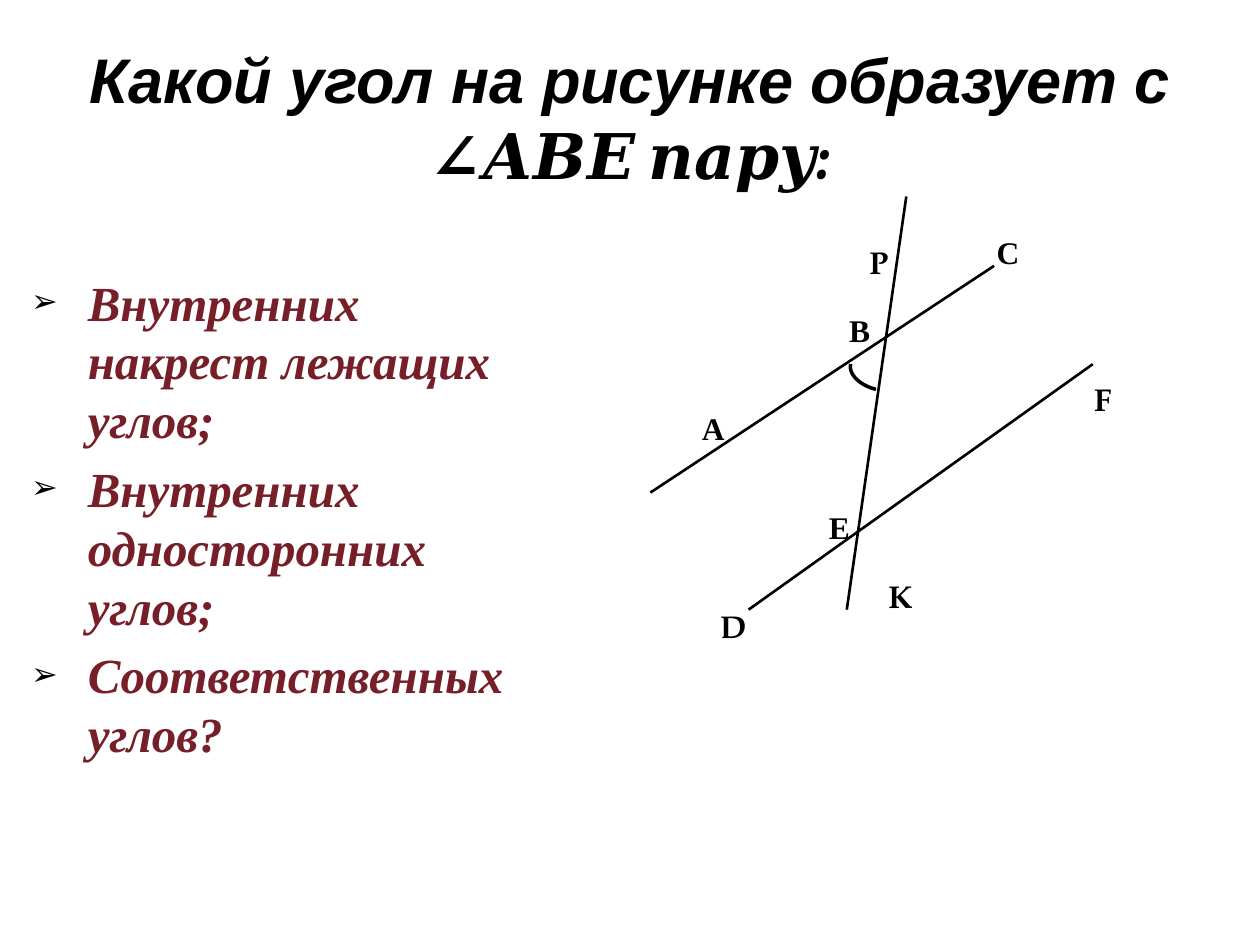
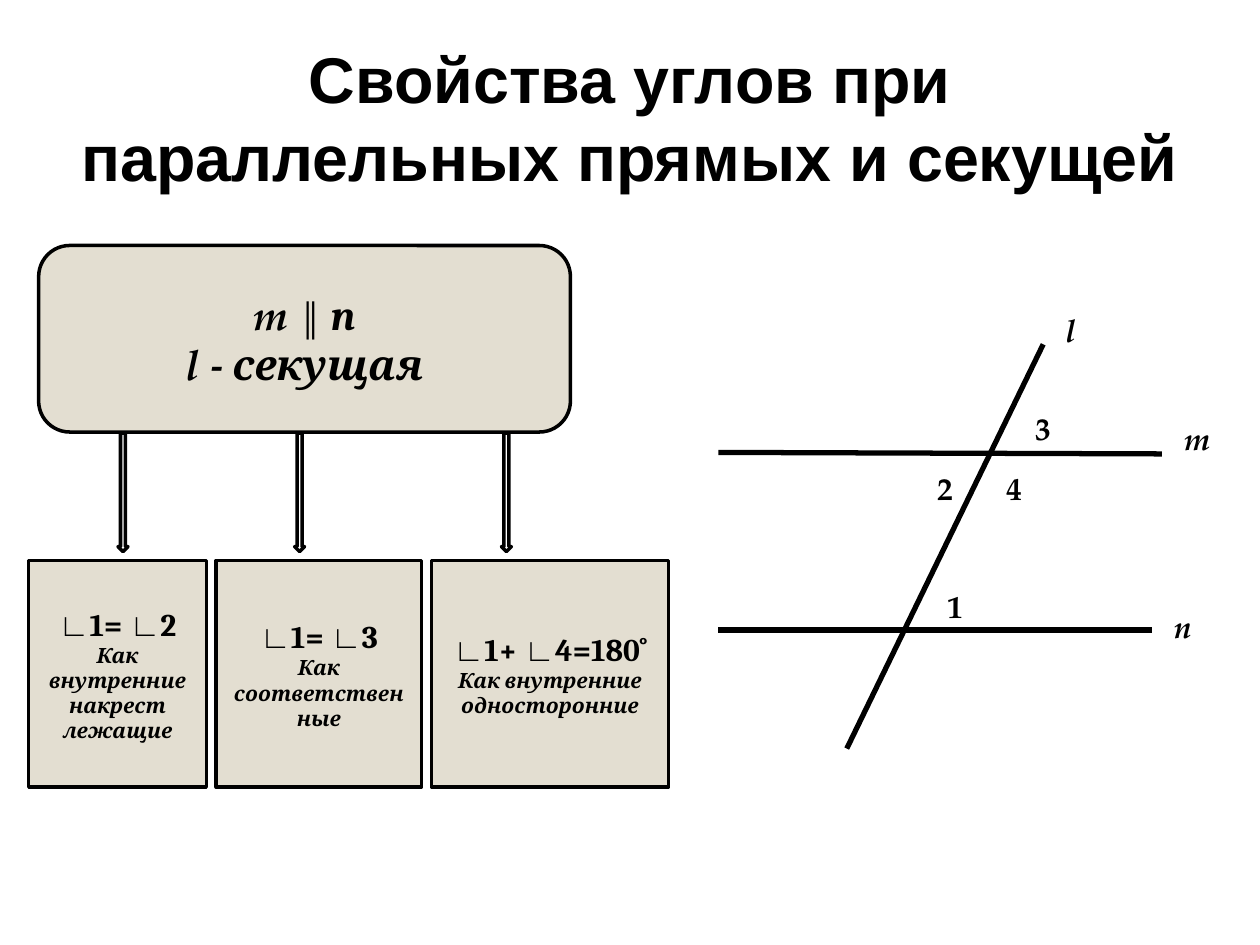
import pptx
import pptx.dml.color
import pptx.enum.shapes
import pptx.enum.text
import pptx.oxml
import pptx.oxml.ns
import pptx.util

Cm = pptx.util.Cm
Pt = pptx.util.Pt
Shape = pptx.enum.shapes.MSO_SHAPE
Anchor = pptx.enum.text.MSO_ANCHOR
Align = pptx.enum.text.PP_ALIGN

INK, SAND, WINE, WHITE = "000000", "E3DED1", "771F28", "FFFFFF"
SANS, SERIF, MATH, LETTERS = "Arial", "Times New Roman", "Cambria", "TeX Gyre Pagella"
TITLE_BOX = (1.27, 0.76, 22.86, 3.18)
LABEL_WIDTH, LABEL_HEIGHT = 1.1, 1.02


def color(value):
    """Turn a hex string into a colour."""
    return pptx.dml.color.RGBColor.from_string(value)


def add_run(paragraph, text, font, size, ink=INK, bold=True, italic=False):
    """Append one formatted run to a paragraph."""
    run = paragraph.add_run()
    run.text = text
    run.font.name = font
    run.font.size = Pt(size)
    run.font.bold = bold
    run.font.italic = italic
    run.font.color.rgb = color(ink)
    properties = run._r.get_or_add_rPr()
    for tag in ("a:ea", "a:cs"):
        element = pptx.oxml.parse_xml(f"<{tag} {pptx.oxml.ns.nsdecls('a')} typeface='{font}'/>")
        properties.append(element)


def add_title(slide, runs, size, italic=False):
    """Place and fill the title from (text, font) pairs."""
    title = slide.shapes.title
    title.left, title.top, title.width, title.height = map(Cm, TITLE_BOX)
    frame = title.text_frame
    frame.word_wrap = True
    frame.auto_size = pptx.enum.text.MSO_AUTO_SIZE.NONE
    frame.vertical_anchor = Anchor.MIDDLE
    paragraph = frame.paragraphs[0]
    paragraph.alignment = Align.CENTER
    for text, font in runs:
        add_run(paragraph, text, font, size, italic=italic)


def add_bullet(paragraph):
    """Give a paragraph a hanging arrow bullet."""
    properties = paragraph._p.get_or_add_pPr()
    properties.set("marL", str(Cm(1.52)))
    properties.set("indent", str(Cm(-1.14)))
    for xml in (
        f"<a:buClr {{}}><a:srgbClr val='{INK}'/></a:buClr>",
        "<a:buSzPct {} val='65000'/>",
        f"<a:buFont {{}} typeface='{SANS}'/>",
        "<a:buChar {} char='➢'/>",
    ):
        properties.append(pptx.oxml.parse_xml(xml.format(pptx.oxml.ns.nsdecls("a"))))


def add_questions(slide, box, questions):
    """Write the bulleted list of angle pairs."""
    frame = slide.shapes.add_textbox(*map(Cm, box)).text_frame
    frame.word_wrap = True
    for index, question in enumerate(questions):
        paragraph = frame.paragraphs[0] if index == 0 else frame.add_paragraph()
        paragraph.space_before = Pt(5.6)
        add_bullet(paragraph)
        add_run(paragraph, question, SERIF, 28, WINE, italic=True)


def add_lines(slide, origin, lines, weight):
    """Draw straight lines given by end points relative to the origin."""
    left, top = origin
    for x1, y1, x2, y2 in lines:
        ends = map(Cm, (left + x1, top + y1, left + x2, top + y2))
        line = slide.shapes.add_connector(pptx.enum.shapes.MSO_CONNECTOR.STRAIGHT, *ends)
        line.line.color.rgb = color(INK)
        line.line.width = Pt(weight)
        effects = pptx.oxml.parse_xml(f"<a:effectLst {pptx.oxml.ns.nsdecls('a')}/>")
        line._element.spPr.append(effects)


def add_labels(slide, origin, labels, font, italic=False):
    """Write short labels at places relative to the origin."""
    left, top = origin
    for text, x, y in labels:
        place = map(Cm, (left + x, top + y, LABEL_WIDTH, LABEL_HEIGHT))
        frame = slide.shapes.add_textbox(*place).text_frame
        frame.word_wrap = True
        add_run(frame.paragraphs[0], text, font, 18, italic=italic)


def add_angle_arc(slide, origin, controls, steps=16):
    """Draw the angle mark along a cubic curve."""
    points = []
    for step in range(steps + 1):
        t = step / steps
        weights = ((1 - t) ** 3, 3 * t * (1 - t) ** 2, 3 * t * t * (1 - t), t ** 3)
        points.append(tuple(
            Cm(origin[axis] + sum(w * control[axis] for w, control in zip(weights, controls)))
            for axis in (0, 1)))
    builder = slide.shapes.build_freeform(*points[0])
    builder.add_line_segments(points[1:], close=False)
    arc = builder.convert_to_shape()
    arc.shadow.inherit = False
    arc.fill.background()
    arc.line.color.rgb = color(INK)
    arc.line.width = Pt(2)


def add_block(slide, kind, box, fill):
    """Add an outlined shape and return it."""
    shape = slide.shapes.add_shape(kind, *map(Cm, box))
    shape.shadow.inherit = False
    shape.fill.solid()
    shape.fill.fore_color.rgb = color(fill)
    shape.line.color.rgb = color(INK)
    shape.line.width = Pt(2)
    return shape


def fill_block(shape, paragraphs):
    """Write centred paragraphs, each a list of (text, font, size, italic)."""
    frame = shape.text_frame
    frame.word_wrap = True
    frame.vertical_anchor = Anchor.MIDDLE
    for index, runs in enumerate(paragraphs):
        paragraph = frame.paragraphs[0] if index == 0 else frame.add_paragraph()
        paragraph.alignment = Align.CENTER
        for text, font, size, italic in runs:
            add_run(paragraph, text, font, size, italic=italic)


def add_scheme(slide, origin):
    """Draw the premise, three arrows and three conclusions."""
    left, top = origin
    premise = add_block(slide, Shape.ROUNDED_RECTANGLE, (left + 0.2, top, 10.72, 3.76), SAND)
    fill_block(premise, [
        [("m ", LETTERS, 24, True), ("║", SANS, 18, True), (" n", MATH, 24, True)],
        [("l ", LETTERS, 24, True), ("- секущая", MATH, 24, True)],
    ])
    for x in (1.8, 5.36, 9.53):
        add_block(slide, Shape.DOWN_ARROW, (left + x, top + 3.78, 0.2, 2.39), WHITE)
    conclusions = (
        (3.58, "1= ", "2", "Как внутренние накрест лежащие"),
        (4.14, "1= ", "3", "Как соответственные"),
        (4.78, "1+ ", "4=180 ̊", "Как внутренние односторонние"),
    )
    for width, first, second, reason in conclusions:
        card = add_block(slide, Shape.RECTANGLE, (left, top + 6.35, width, 4.57), SAND)
        fill_block(card, [
            [("∟", SANS, 18, False), (first, MATH, 18, False),
             ("∟", SANS, 18, False), (second, MATH, 18, False)],
            [(reason, MATH, 12, True)],
        ])
        left += width + 0.2


def build_question_slide(slide):
    """Build the slide asking which angle makes a pair."""
    add_title(slide, [("Какой угол на рисунке образует с ", SANS), ("∠АВЕ пару:", MATH)], 36, True)
    add_questions(slide, (0, 5.36, 10.72, 11.13), (
        "Внутренних накрест лежащих углов;",
        "Внутренних односторонних углов;",
        "Соответственных углов?"))
    figure = (13.11, 3.96)
    add_lines(slide, figure, (
        (0, 5.97, 6.93, 1.4), (1.98, 8.33, 8.92, 3.38), (5.16, 0, 3.96, 8.33)), 1.5)
    add_labels(slide, figure, (
        ("А", 0.79, 4.17), ("В", 3.76, 2.18), ("С", 6.73, 0.61), ("Е", 3.35, 6.15)), SERIF)
    add_labels(slide, figure, (
        ("D", 1.17, 8.15), ("K", 4.55, 7.54), ("F", 8.71, 3.58), ("P", 4.17, 0.81)), LETTERS)
    add_angle_arc(slide, figure, ((4.55, 3.89), (4.22, 3.81), (3.99, 3.58), (4.04, 3.38)))


def build_properties_slide(slide):
    """Build the slide on angles at parallel lines and a transversal."""
    add_title(slide, [("Свойства углов при параллельных прямых и секущей", SANS)], 36.9)
    figure = (14.48, 6.15)
    add_lines(slide, figure, (
        (0, 2.97, 8.94, 3), (0, 6.55, 8.74, 6.55), (6.55, 0.79, 2.59, 8.94)), 3)
    add_labels(slide, figure, (("m", 9.14, 2.18), ("n", 8.94, 5.97), ("l", 6.76, 0)), LETTERS, True)
    add_labels(slide, figure, (
        ("1", 4.37, 5.56), ("2", 4.17, 3.18), ("4", 5.56, 3.18), ("3", 6.15, 1.98)), LETTERS)
    add_scheme(slide, (0.58, 4.95))


def main():
    """Build and save the presentation."""
    presentation = pptx.Presentation()
    presentation.slide_width, presentation.slide_height = Cm(25.4), Cm(19.05)
    for build in (build_question_slide, build_properties_slide):
        build(presentation.slides.add_slide(presentation.slide_layouts[5]))
    presentation.save("out.pptx")


if __name__ == "__main__":
    main()
